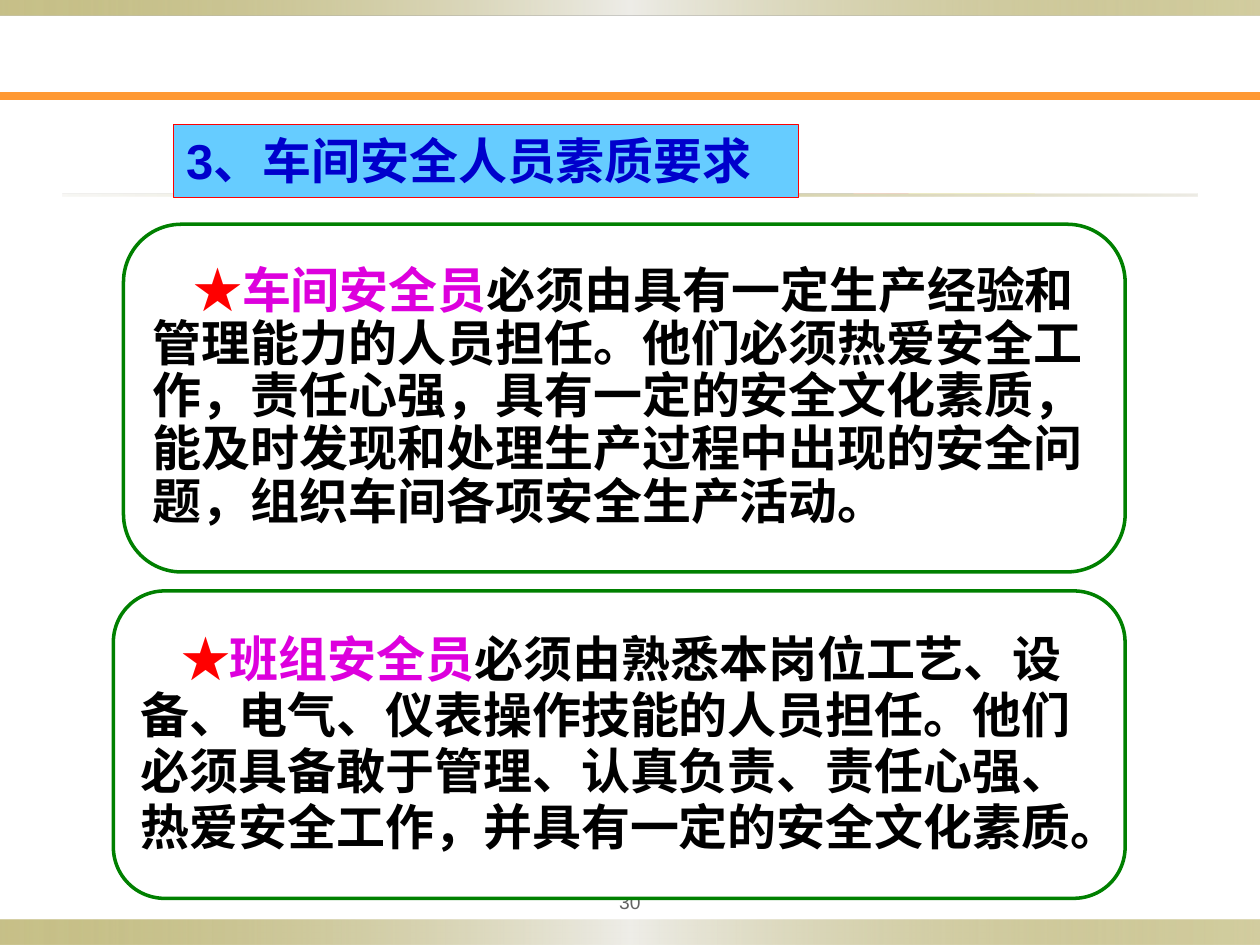
from lxml import etree
from pptx import Presentation
from pptx.dml.color import RGBColor
from pptx.enum.shapes import MSO_CONNECTOR, MSO_SHAPE
from pptx.enum.text import MSO_ANCHOR, MSO_AUTO_SIZE, PP_ALIGN
from pptx.oxml import parse_xml
from pptx.oxml.ns import qn
from pptx.util import Inches, Pt

RECT, ROUND = MSO_SHAPE.RECTANGLE, MSO_SHAPE.ROUNDED_RECTANGLE
LINE = MSO_CONNECTOR.STRAIGHT
LEFT, CENTER = PP_ALIGN.LEFT, PP_ALIGN.CENTER
MIDDLE, TOP = MSO_ANCHOR.MIDDLE, MSO_ANCHOR.TOP
GROW = MSO_AUTO_SIZE.SHAPE_TO_FIT_TEXT
NS = "http://schemas.openxmlformats.org/drawingml/2006/main"

COLORS = {
    "olive": "918415", "pale": "EEEDE8", "sand": "DCD9CC",
    "orange": "FF9933", "gray": "636363", "white": "FFFFFF",
    "green": "008000", "sky": "66CCFF", "red": "FF0000",
    "blue": "0000CC", "pink": "DD00DD", "black": "000000",
}
# Gradient stops: position, colour, opacity (all in percent)
BAND = [(0, "olive", 50), (50, "pale", 100), (100, "olive", 40)]
RULE = [(0, "sand", 20), (50, "olive", 40), (100, "sand", 50)]


def color(name):
    return RGBColor.from_string(COLORS[name])


class Deck:
    latin, asian, size = "Arial", "Noto Sans CJK SC", 28

    def __init__(self, slide):
        self.slide = slide

    def shape(self, kind, box, fill=None, line=None, width=1):
        item = self.slide.shapes.add_shape(kind, *map(Inches, box))
        item.shadow.inherit = False
        if fill:
            item.fill.solid()
            item.fill.fore_color.rgb = color(fill)
        if line:
            item.line.color.rgb = color(line)
            item.line.width = Pt(width)
        else:
            item.line.fill.background()
        return item

    def band(self, box, stops):
        item = self.shape(RECT, box)
        marks = "".join(
            f'<a:gs pos="{pos * 1000}"><a:srgbClr val="{COLORS[name]}">'
            f'<a:alpha val="{alpha * 1000}"/></a:srgbClr></a:gs>'
            for pos, name, alpha in stops)
        grad = parse_xml(f'<a:gradFill xmlns:a="{NS}" rotWithShape="1"><a:gsLst>{marks}'
                         '</a:gsLst><a:lin ang="0" scaled="1"/></a:gradFill>')
        item._element.spPr.find(qn("a:prstGeom")).addnext(grad)

    def line(self, start, end, name, width):
        item = self.slide.shapes.add_connector(LINE, *map(Inches, start + end))
        item.line.color.rgb = color(name)
        item.line.width = Pt(width)
        etree.SubElement(item._element.spPr, qn("a:effectLst"))

    def run(self, para, text, name, size=size, bold=True):
        run = para.add_run()
        run.text = text
        font = run.font
        font.name, font.size, font.bold = self.latin, Pt(size), bold
        font.color.rgb = color(name)
        etree.SubElement(font._element, qn("a:ea"), typeface=self.asian)

    def number(self, box, text):
        frame = self.slide.shapes.add_textbox(*map(Inches, box)).text_frame
        frame.word_wrap = True
        frame.vertical_anchor = MIDDLE
        frame.margin_left = frame.margin_right = Inches(0.05)
        para = frame.paragraphs[0]
        para.alignment = CENTER
        self.run(para, text, "gray", 11, False)

    def title(self, box, text):
        frame = self.shape(RECT, box, "sky", "red", 0.75).text_frame
        frame.word_wrap = True
        frame.auto_size = GROW
        frame.vertical_anchor = TOP
        para = frame.paragraphs[0]
        para.alignment = LEFT
        self.run(para, text, "blue")

    def card(self, box, role, lines, space):
        frame = self.shape(ROUND, box, "white", "green", 2).text_frame
        frame.word_wrap = False
        frame.vertical_anchor = MIDDLE
        for i, text in enumerate(lines):
            para = frame.paragraphs[0] if i == 0 else frame.add_paragraph()
            para.alignment = LEFT
            para.line_spacing = space
            if i == 0:
                para._p.get_or_add_pPr().set("indent", str(Inches(0.32)))
                self.run(para, "★", "red")
                self.run(para, role, "pink")
            self.run(para, text, "black")


def main():
    prs = Presentation()
    prs.slide_width, prs.slide_height = Inches(10), Inches(7.5)
    deck = Deck(prs.slides.add_slide(prs.slide_layouts[6]))

    # Frame of the page
    deck.band((0, 7.3, 10, 0.2), BAND)
    deck.band((0, 0, 10, 0.12), BAND)
    deck.line((0, 0.76), (10, 0.76), "orange", 4.5)
    deck.band((0.5, 1.54, 9, 0.02), RULE)
    deck.number((4.5, 7, 1, 0.31), "30")

    # Duties of each role
    deck.card((0.98, 1.78, 7.95, 2.76), "车间安全员", [
        "必须由具有一定生产经验和",
        "管理能力的人员担任。他们必须热爱安全工",
        "作，责任心强，具有一定的安全文化素质，",
        "能及时发现和处理生产过程中出现的安全问",
        "题，组织车间各项安全生产活动。",
    ], 0.9)
    deck.card((0.9, 4.69, 8.03, 2.44), "班组安全员", [
        "必须由熟悉本岗位工艺、设",
        "备、电气、仪表操作技能的人员担任。他们",
        "必须具备敢于管理、认真负责、责任心强、",
        "热爱安全工作，并具有一定的安全文化素质。",
    ], 0.95)

    # Heading
    deck.title((1.38, 0.99, 4.96, 0.58), "3、车间安全人员素质要求")
    prs.save("out.pptx")


if __name__ == "__main__":
    main()
